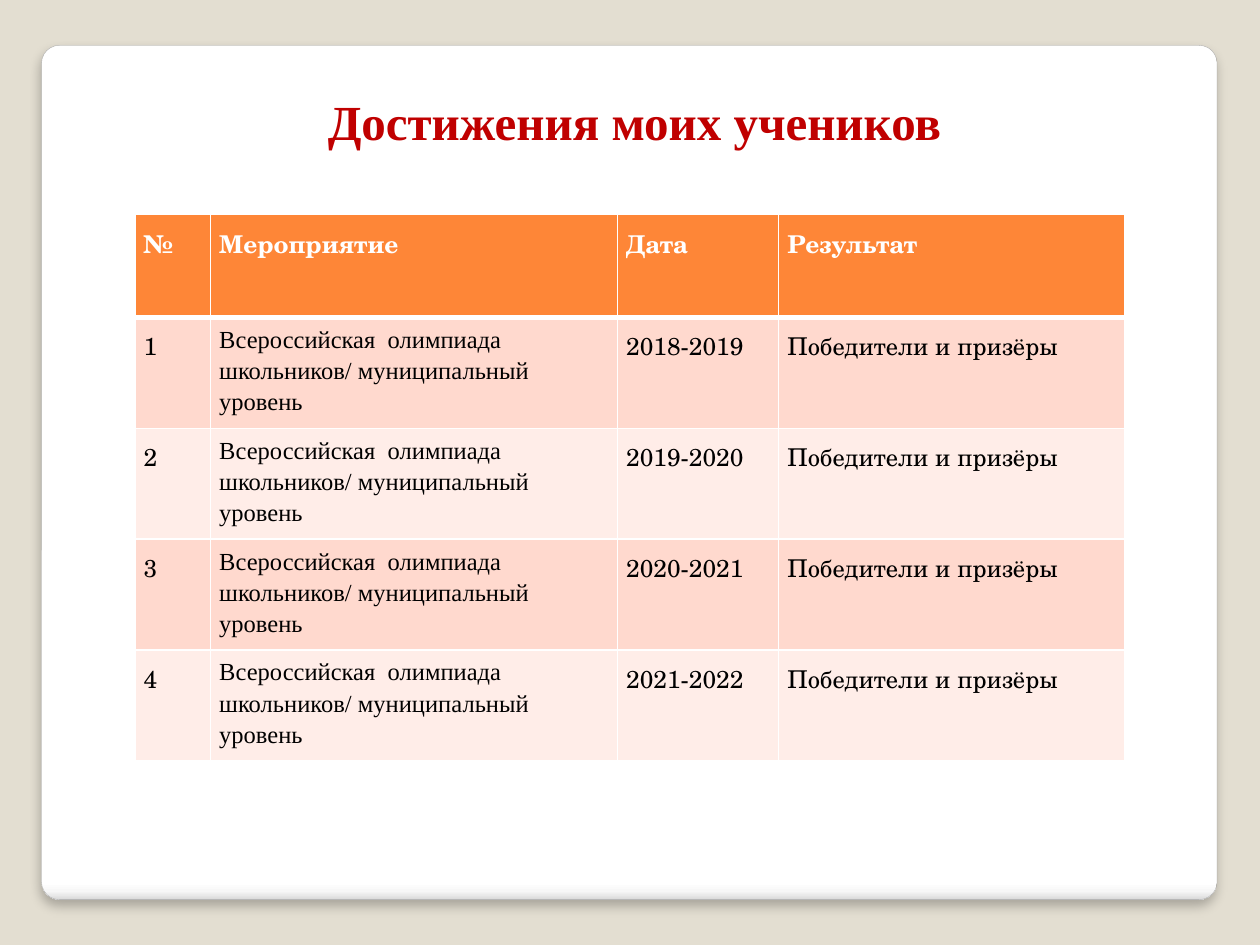
from dataclasses import dataclass

from lxml import etree
from pptx import Presentation
from pptx.dml.color import RGBColor
from pptx.enum.shapes import MSO_SHAPE
from pptx.enum.text import MSO_ANCHOR, PP_ALIGN
from pptx.oxml import parse_xml
from pptx.oxml.ns import nsdecls, qn
from pptx.util import Inches, Pt

ROUND = MSO_SHAPE.ROUNDED_RECTANGLE
TOP = MSO_ANCHOR.TOP
CENTER = PP_ALIGN.CENTER
LEFT = PP_ALIGN.LEFT

SAND = RGBColor(0xE3, 0xDE, 0xD1)
WHITE = RGBColor(0xFF, 0xFF, 0xFF)
BLACK = RGBColor(0x00, 0x00, 0x00)
GRAY = RGBColor(0xA4, 0xA4, 0xA4)
MIST = RGBColor(0xF7, 0xF7, 0xF7)
SILVER = RGBColor(0xDA, 0xDA, 0xDA)
RED = RGBColor(0xC0, 0x00, 0x00)
ORANGE = RGBColor(0xFE, 0x86, 0x37)
PEACH = RGBColor(0xFF, 0xD9, 0xCE)
CREAM = RGBColor(0xFF, 0xED, 0xE8)

SERIF = "Times New Roman"
SCHOLA = "TeX Gyre Schola"
STOPS = ((0, WHITE), (98, WHITE), (99, MIST), (100, SILVER))
EVENT = "Всероссийская  олимпиада школьников/ муниципальный уровень"
RESULT = "Победители и призёры"
YEARS = ("2018-2019", "2019-2020", "2020-2021", "2021-2022")
INSETS = {
    "margin_left": Inches(0.07),
    "margin_right": Inches(0.07),
    "margin_top": Inches(0.04),
    "margin_bottom": Inches(0.04),
}


@dataclass
class Column:
    head: str
    width: float
    font: str = SCHOLA


@dataclass
class Row:
    texts: tuple
    height: float
    fill: RGBColor
    color: RGBColor = BLACK
    bold: bool = False
    above: int = 1
    below: int = 1


COLS = (
    Column("№", 0.6),
    Column("Мероприятие", 3.23, SERIF),
    Column("Дата", 1.28),
    Column("Результат", 2.75),
)


def apply(target, values: dict) -> None:
    for name, value in values.items():
        setattr(target, name, value)


def style(para, font: str, size: int, color: RGBColor, bold: bool) -> None:
    for run in para.runs:
        apply(run.font, {"name": font, "size": Pt(size), "bold": bold})
        run.font.color.rgb = color


def draw_panel(slide) -> None:
    panel = slide.shapes.add_shape(
        ROUND, Inches(0.33), Inches(0.36), Inches(9.33), Inches(6.78)
    )
    panel.adjustments[0] = 0.021
    panel.fill.gradient()
    panel.fill.gradient_angle = 270
    stops = panel.element.spPr.find(".//" + qn("a:gsLst"))
    for old in list(stops):
        stops.remove(old)
    for place, color in STOPS:
        stop = etree.SubElement(stops, qn("a:gs"), pos=str(place * 1000))
        etree.SubElement(stop, qn("a:srgbClr"), val=str(color))
    panel.line.color.rgb = GRAY
    panel.line.width = Pt(0.16)
    panel.element.spPr.append(parse_xml(
        f'<a:effectLst {nsdecls("a")}>'
        f'<a:outerShdw blurRad="{Pt(6)}" dist="{Pt(4)}" dir="5400000">'
        '<a:srgbClr val="000000"><a:alpha val="25000"/></a:srgbClr>'
        '</a:outerShdw></a:effectLst>'
    ))
    slide.shapes.title.element.addprevious(panel.element)


def draw_title(slide, text: str) -> None:
    title = slide.shapes.title
    apply(title, {
        "left": Inches(0.98), "top": Inches(0.65),
        "width": Inches(8.11), "height": Inches(1.18),
    })
    frame = title.text_frame
    frame.text = text
    apply(frame, {
        "word_wrap": True, "vertical_anchor": TOP, "margin_top": Inches(0.08),
    })
    para = frame.paragraphs[0]
    para.alignment = CENTER
    style(para, SERIF, 28, RED, True)


def add_edges(cell, row: Row) -> None:
    props = cell._tc.get_or_add_tcPr()
    edges = {"lnL": 1, "lnR": 1, "lnT": row.above, "lnB": row.below}
    for tag, width in edges.items():
        edge = etree.SubElement(props, qn(f"a:{tag}"), w=str(Pt(width)))
        fill = etree.SubElement(edge, qn("a:solidFill"))
        etree.SubElement(fill, qn("a:srgbClr"), val=str(WHITE))


def draw_cell(cell, text: str, font: str, row: Row) -> None:
    add_edges(cell, row)
    cell.fill.solid()
    cell.fill.fore_color.rgb = row.fill
    apply(cell, {**INSETS, "vertical_anchor": TOP})
    cell.text = text
    para = cell.text_frame.paragraphs[0]
    apply(para, {"alignment": LEFT, "line_spacing": 1.15})
    style(para, font, 14, row.color, row.bold)


def draw_table(slide, rows: list[Row]) -> None:
    table = slide.shapes.add_table(
        len(rows), len(COLS), Inches(1.07), Inches(1.7),
        Inches(sum(col.width for col in COLS)),
        Inches(sum(row.height for row in rows)),
    ).table
    apply(table, {"first_row": False, "horz_banding": False})
    for i, col in enumerate(COLS):
        table.columns[i].width = Inches(col.width)
    for j, row in enumerate(rows):
        table.rows[j].height = Inches(row.height)
        for i, text in enumerate(row.texts):
            font = SCHOLA if row.bold else COLS[i].font
            draw_cell(table.cell(j, i), text, font, row)


def main() -> None:
    deck = Presentation()
    apply(deck, {"slide_width": Inches(10), "slide_height": Inches(7.5)})
    slide = deck.slides.add_slide(deck.slide_layouts[5])
    slide.background.fill.solid()
    slide.background.fill.fore_color.rgb = SAND
    draw_panel(slide)
    draw_title(slide, "Достижения моих учеников")
    heads = tuple(col.head for col in COLS)
    rows = [Row(heads, 0.82, ORANGE, WHITE, True, below=3)]
    for num, year in enumerate(YEARS, 1):
        rows.append(Row(
            (str(num), EVENT, year, RESULT), 0.88,
            PEACH if num % 2 else CREAM, above=3 if num == 1 else 1,
        ))
    draw_table(slide, rows)
    deck.save("out.pptx")


if __name__ == "__main__":
    main()
